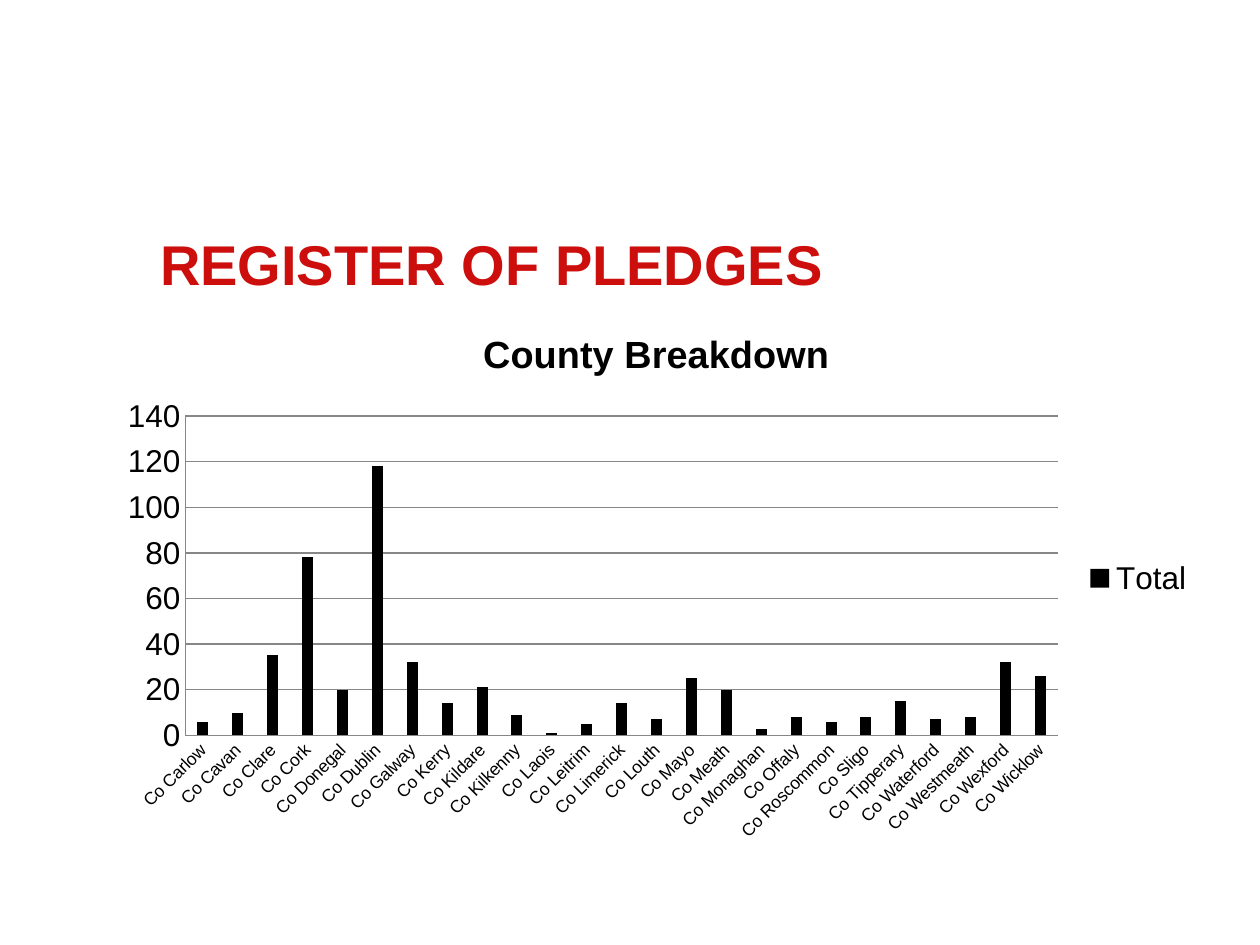
from pptx import Presentation
from pptx.chart.data import CategoryChartData
from pptx.dml.color import RGBColor
from pptx.enum.chart import XL_CHART_TYPE, XL_LEGEND_POSITION, XL_TICK_MARK
from pptx.enum.text import MSO_ANCHOR, PP_ALIGN
from pptx.util import Inches, Pt

COLORS = {"title": "CC0F0D", "text": "000000", "bar": "000000", "line": "878787"}
FONT = "Arial"

PLEDGES = {
    "Carlow": 6, "Cavan": 10, "Clare": 35, "Cork": 78, "Donegal": 20,
    "Dublin": 118, "Galway": 32, "Kerry": 14, "Kildare": 21, "Kilkenny": 9,
    "Laois": 1, "Leitrim": 5, "Limerick": 14, "Louth": 7, "Mayo": 25,
    "Meath": 20, "Monaghan": 3, "Offaly": 8, "Roscommon": 6, "Sligo": 8,
    "Tipperary": 15, "Waterford": 7, "Westmeath": 8, "Wexford": 32,
    "Wicklow": 26,
}


class SlideBuilder:
    """Holds the style and the current slide."""

    def __init__(self, prs):
        self.s = prs.slides.add_slide(prs.slide_layouts[5])

    def color(self, name):
        return RGBColor.from_string(COLORS[name])

    def style(self, font, size, color="text", bold=False):
        font.name, font.size, font.bold = FONT, Pt(size), bold
        font.color.rgb = self.color(color)

    def title(self, text, left, top, width, height):
        sp = self.s.shapes.title
        sp.left, sp.top = Inches(left), Inches(top)
        sp.width, sp.height = Inches(width), Inches(height)
        tf = sp.text_frame
        tf.word_wrap = True
        tf.vertical_anchor = MSO_ANCHOR.MIDDLE
        p = tf.paragraphs[0]
        p.alignment = PP_ALIGN.LEFT
        r = p.add_run()
        r.text = text
        self.style(r.font, 32, "title", bold=True)

    def column_chart(self, title, series, values, left, top, width, height):
        data = CategoryChartData()
        data.categories = list(values)
        data.add_series(series, list(values.values()))
        chart = self.s.shapes.add_chart(
            XL_CHART_TYPE.COLUMN_CLUSTERED, Inches(left), Inches(top),
            Inches(width), Inches(height), data).chart
        self.style(chart.font, 18)

        chart.has_title = True
        r = chart.chart_title.text_frame.paragraphs[0].add_run()
        r.text = title
        self.style(r.font, 21.6, bold=True)
        chart.has_legend = True
        chart.legend.position = XL_LEGEND_POSITION.RIGHT
        chart.legend.include_in_layout = False

        plot = chart.plots[0]
        plot.gap_width, plot.overlap = 219, -27
        plot.vary_by_categories = False
        fill = plot.series[0].format.fill
        fill.solid()
        fill.fore_color.rgb = self.color("bar")
        self.axes(chart)

    def axes(self, chart):
        grid = chart.value_axis.major_gridlines.format.line
        for axis, size in ((chart.category_axis, 10), (chart.value_axis, 18)):
            axis.major_tick_mark = axis.minor_tick_mark = XL_TICK_MARK.NONE
            self.style(axis.tick_labels.font, size)
        for line in (chart.category_axis.format.line,
                     chart.value_axis.format.line, grid):
            line.width = Pt(0.75)
            line.color.rgb = self.color("line")
        chart.value_axis.minimum_scale = 0
        chart.value_axis.maximum_scale = 140
        chart.value_axis.major_unit = 20
        # Slant the county names by 45 degrees, in 60000ths of a degree
        body = chart.category_axis._element.txPr.bodyPr
        body.set("rot", str(-45 * 60000))
        body.set("vert", "horz")


def main():
    prs = Presentation()
    prs.slide_width, prs.slide_height = Inches(10), Inches(7.5)
    slide = SlideBuilder(prs)
    slide.title("REGISTER OF PLEDGES", 1.17, 1.75, 8.09, 0.67)
    counties = {f"Co {name}": count for name, count in PLEDGES.items()}
    slide.column_chart("County Breakdown", "Total", counties,
                       0.84, 2.42, 8.74, 4.34)
    prs.save("out.pptx")


if __name__ == "__main__":
    main()
